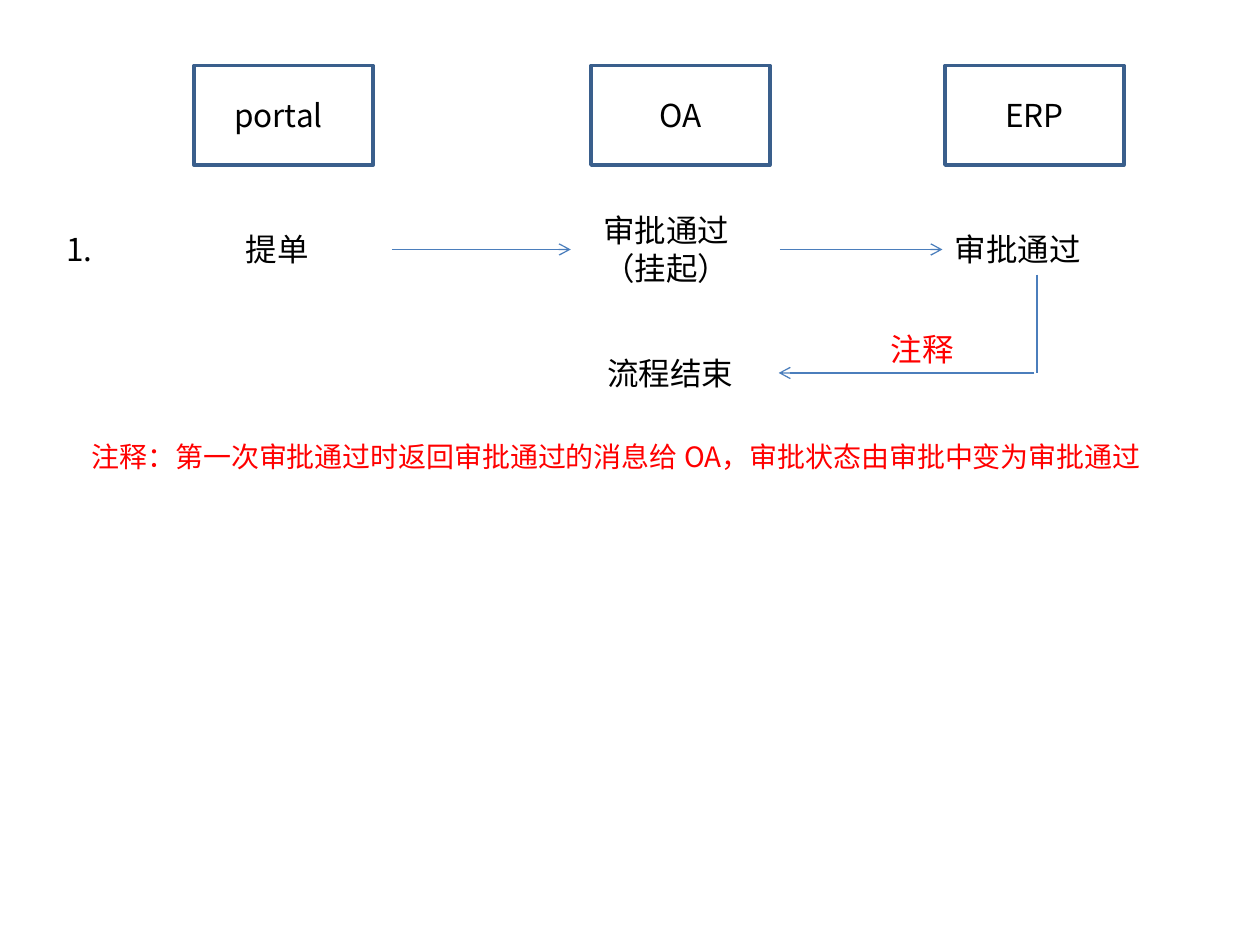
"""Build the approval flow slide between portal, OA and ERP."""
import lxml.etree
import pptx
import pptx.dml.color
import pptx.enum.shapes
import pptx.enum.text
import pptx.oxml.ns
import pptx.util

BLACK = pptx.dml.color.RGBColor(0x00, 0x00, 0x00)
WHITE = pptx.dml.color.RGBColor(0xFF, 0xFF, 0xFF)
RED = pptx.dml.color.RGBColor(0xFF, 0x00, 0x00)
BORDER_BLUE = pptx.dml.color.RGBColor(0x3A, 0x5F, 0x8C)
ARROW_BLUE = pptx.dml.color.RGBColor(0x4B, 0x7E, 0xBC)
FONT = "Noto Sans CJK SC"

presentation = pptx.Presentation()
presentation.slide_width = pptx.util.Inches(10)
presentation.slide_height = pptx.util.Inches(7.5)
slide = presentation.slides.add_slide(presentation.slide_layouts[6])
column = presentation.slide_width / 100
row = presentation.slide_height / 75


def place(left, top, width, height):
    return [int(left * column), int(top * row), int(width * column), int(height * row)]


def write(shape, text, size, color):
    shape.text_frame.text = text
    run = shape.text_frame.paragraphs[0].runs[0]
    run.font.size = pptx.util.Pt(size)
    run.font.name = FONT
    run.font.color.rgb = color
    east_asian = lxml.etree.SubElement(run._r.get_or_add_rPr(), pptx.oxml.ns.qn("a:ea"))
    east_asian.set("typeface", FONT)


systems = [("portal", 15.4, 1.8), ("OA", 46.9, 1), ("ERP", 75, 1)]
for name, left, right_margin in systems:
    box = slide.shapes.add_shape(
        pptx.enum.shapes.MSO_SHAPE.RECTANGLE, *place(left, 5.2, 14.2, 7.9))
    box.shadow.inherit = False
    box.fill.solid()
    box.fill.fore_color.rgb = WHITE
    box.line.color.rgb = BORDER_BLUE
    box.line.width = pptx.util.Pt(2)
    write(box, name, 18, BLACK)
    box.text_frame.margin_right = int(right_margin * column)
    box.text_frame.vertical_anchor = pptx.enum.text.MSO_ANCHOR.MIDDLE
    box.text_frame.paragraphs[0].alignment = pptx.enum.text.PP_ALIGN.CENTER

labels = [
    ("提单", 18.5, 17.8, 7.9, 4, 18, BLACK),
    ("审批通过（挂起）", 46.9, 16.25, 15, 7.1, 18, BLACK),
    ("审批通过", 74.8, 17.8, 16.3, 4, 18, BLACK),
    ("1.", 4.3, 17.8, 8.7, 4, 18, BLACK),
    ("流程结束", 47.2, 27.6, 13.4, 4, 18, BLACK),
    ("注释：第一次审批通过时返回审批通过的消息给 OA，审批状态由审批中变为审批通过",
     6.3, 34.4, 93.7, 3.7, 16, RED),
    ("注释", 69.7, 25.7, 7.1, 4, 18, RED),
]
text_boxes = []
for text, left, top, width, height, size, color in labels:
    text_box = slide.shapes.add_textbox(*place(left, top, width, height))
    write(text_box, text, size, color)
    text_box.text_frame.word_wrap = text != "注释"
    text_box.text_frame.auto_size = pptx.enum.text.MSO_AUTO_SIZE.SHAPE_TO_FIT_TEXT
    text_boxes.append(text_box)
suspended, approved = text_boxes[1:3]

routes = [
    (31.1, 19.8, 45.3, 19.8, True, None, None),
    (61.9, 19.8, 74.8, 19.8, True, suspended, approved),
    (82.3, 21.8, 82.3, 29.6, False, None, None),
    (82.1, 29.6, 61.8, 29.6, True, None, None),
]
for start_x, start_y, end_x, end_y, has_arrow, source, target in routes:
    connector = slide.shapes.add_connector(
        pptx.enum.shapes.MSO_CONNECTOR.STRAIGHT, *place(start_x, start_y, end_x, end_y))
    if source:
        connector.begin_connect(source, 3)
        connector.end_connect(target, 1)
    connector.line.color.rgb = ARROW_BLUE
    connector.line.width = pptx.util.Pt(0.75)
    if has_arrow:
        line = connector.line._get_or_add_ln()
        lxml.etree.SubElement(line, pptx.oxml.ns.qn("a:tailEnd")).set("type", "arrow")
    lxml.etree.SubElement(connector._element.spPr, pptx.oxml.ns.qn("a:effectLst"))

presentation.save("out.pptx")
